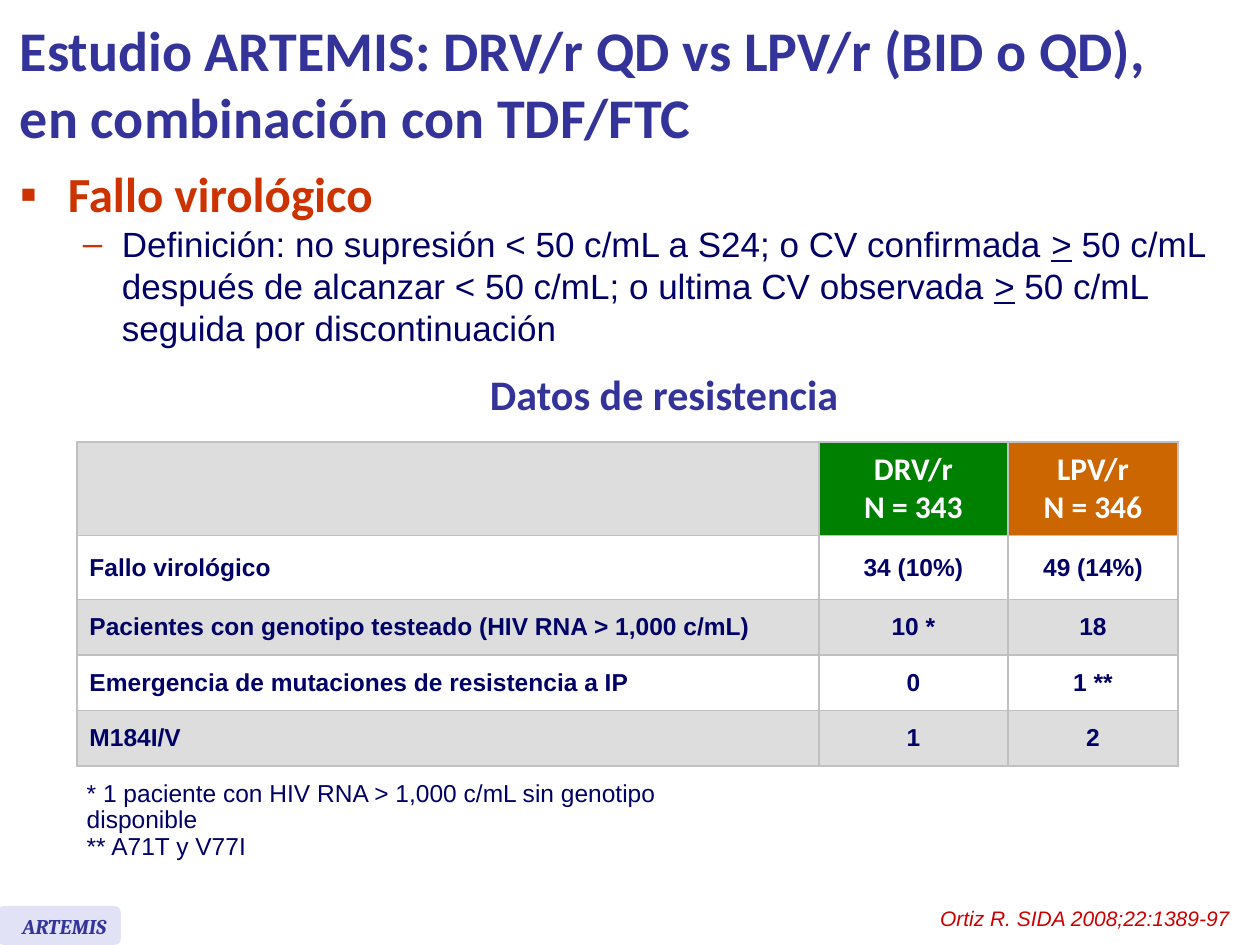
from lxml import etree
from pptx import Presentation
from pptx.dml.color import RGBColor
from pptx.enum.shapes import MSO_SHAPE
from pptx.enum.text import MSO_ANCHOR, PP_ALIGN
from pptx.oxml.ns import qn
from pptx.util import Inches, Pt

MIDDLE = MSO_ANCHOR.MIDDLE
TOP = MSO_ANCHOR.TOP
LEFT = PP_ALIGN.LEFT
CENTER = PP_ALIGN.CENTER
RIGHT = PP_ALIGN.RIGHT
ROUNDED = MSO_SHAPE.ROUNDED_RECTANGLE

BLUE, NAVY, RED, GRAY, WHITE = "333399", "000066", "CC3300", "DDDDDD", "FFFFFF"
HEADS = [("DRV/r\nN = 343", "008000"), ("LPV/r\nN = 346", "CC6600")]
ROWS = [
    ("Fallo virológico", "34 (10%)", "49 (14%)"),
    ("Pacientes con genotipo testeado (HIV RNA > 1,000 c/mL)", "10 *", "18"),
    ("Emergencia de mutaciones de resistencia a IP", "0", "1 **"),
    ("M184I/V", "1", "2"),
]
WIDTHS = [5.89, 1.5, 1.35]
HEIGHTS = [0.74, 0.51, 0.44, 0.44, 0.44]


def paint(target, color):
    target.solid()
    target.fore_color.rgb = RGBColor.from_string(color)


def write(par, text, size=14, face="Arial", color=NAVY, bold=False,
          italic=False, under=False, align=LEFT, spacing=None):
    par.alignment = align
    if spacing:
        par.line_spacing = spacing
    for i, line in enumerate(text.split("\n")):
        if i:
            par.add_line_break()
        run = par.add_run()
        run.text = line
        font = run.font
        font.name, font.size = face, Pt(size)
        font.bold, font.italic = bold, italic
        if under:
            font.underline = True
        font.color.rgb = RGBColor.from_string(color)


def add_box(slide, x, y, w, h, anchor=TOP, wrap=True):
    shape = slide.shapes.add_textbox(Inches(x), Inches(y), Inches(w), Inches(h))
    frame = shape.text_frame
    frame.word_wrap = wrap
    frame.vertical_anchor = anchor
    return frame


def add_bullet(par, mark, left, hang):
    props = par._p.get_or_add_pPr()
    props.set("marL", str(Inches(left)))
    props.set("indent", str(-Inches(hang)))
    tint = etree.SubElement(props, qn("a:buClr"))
    etree.SubElement(tint, qn("a:srgbClr"), val=RED)
    etree.SubElement(props, qn("a:buFont"), typeface="Arial")
    etree.SubElement(props, qn("a:buChar"), char=mark)


def add_body(slide):
    frame = add_box(slide, 0.06, 1.25, 9.87, 1.71)
    head = frame.paragraphs[0]
    add_bullet(head, "▪", 0.38, 0.38)
    write(head, "Fallo virológico", size=28, face="Calibri", color=RED, bold=True)
    item = frame.add_paragraph()
    add_bullet(item, "–", 0.81, 0.31)
    parts = [
        "Definición: no supresión < 50 c/mL a S24; o CV confirmada ",
        ">",
        " 50 c/mL después de alcanzar < 50 c/mL; o ultima CV observada ",
        ">",
        " 50 c/mL seguida por discontinuación",
    ]
    for part in parts:
        write(item, part, size=20, under=part == ">")


def add_edges(cell):
    props = cell._tc.get_or_add_tcPr()
    for side in ("L", "R", "T", "B"):
        line = etree.SubElement(props, qn("a:ln" + side), w=str(Pt(1)))
        fill = etree.SubElement(line, qn("a:solidFill"))
        etree.SubElement(fill, qn("a:srgbClr"), val="C0C0C0")


def fill_cell(cell, text, back, **style):
    add_edges(cell)
    paint(cell.fill, back)
    cell.vertical_anchor = MIDDLE
    if text:
        write(cell.text_frame.paragraphs[0], text, bold=True, **style)


def add_grid(slide):
    table = slide.shapes.add_table(
        len(HEIGHTS), len(WIDTHS), Inches(0.61), Inches(3.51),
        Inches(sum(WIDTHS)), Inches(sum(HEIGHTS))).table
    table.first_row = table.horz_banding = False
    for col, width in zip(table.columns, WIDTHS):
        col.width = Inches(width)
    for row, height in zip(table.rows, HEIGHTS):
        row.height = Inches(height)
    fill_cell(table.cell(0, 0), "", GRAY)
    for c, (text, back) in enumerate(HEADS, 1):
        fill_cell(table.cell(0, c), text, back, size=18, face="Calibri",
                  color=WHITE, align=CENTER)
    for r, row in enumerate(ROWS, 1):
        for c, text in enumerate(row):
            fill_cell(table.cell(r, c), text, WHITE if r % 2 else GRAY,
                      align=CENTER if c else LEFT)


def add_notes(slide):
    frame = add_box(slide, 0.59, 6.15, 5.6, 0.52)
    write(frame.paragraphs[0],
          "* 1 paciente con HIV RNA > 1,000 c/mL sin genotipo disponible",
          spacing=0.9)
    write(frame.add_paragraph(), "** A71T y V77I", spacing=0.9)


def add_tag(slide):
    tag = slide.shapes.add_shape(
        ROUNDED, Inches(-0.02), Inches(7.19), Inches(0.98), Inches(0.31))
    tag.shadow.inherit = False
    paint(tag.fill, "E2E2F6")
    tag.line.fill.background()
    frame = add_box(slide, 0.08, 7.2, 0.93, 0.3)
    write(frame.paragraphs[0], "ARTEMIS", size=12, face="Cambria",
          color=BLUE, bold=True, italic=True)


def main():
    deck = Presentation()
    deck.slide_width, deck.slide_height = Inches(10), Inches(7.5)
    slide = deck.slides.add_slide(deck.slide_layouts[6])
    title = add_box(slide, 0.06, 0.05, 9.94, 1.21, anchor=MIDDLE)
    write(title.paragraphs[0],
          "Estudio ARTEMIS: DRV/r QD vs LPV/r (BID o QD),\n"
          "en combinación con TDF/FTC",
          size=32, face="Calibri", color=BLUE, bold=True)
    add_body(slide)
    add_grid(slide)
    add_notes(slide)
    label = add_box(slide, 3.79, 2.92, 2.99, 0.46, wrap=False)
    write(label.paragraphs[0], "Datos de resistencia", size=24,
          face="Calibri", color=BLUE, bold=True, spacing=0.9)
    cite = add_box(slide, 6.86, 7.14, 3, 0.3)
    write(cite.paragraphs[0], "Ortiz R. SIDA 2008;22:1389-97", size=12,
          color="CC0000", italic=True, align=RIGHT)
    add_tag(slide)
    deck.save("out.pptx")


if __name__ == "__main__":
    main()
